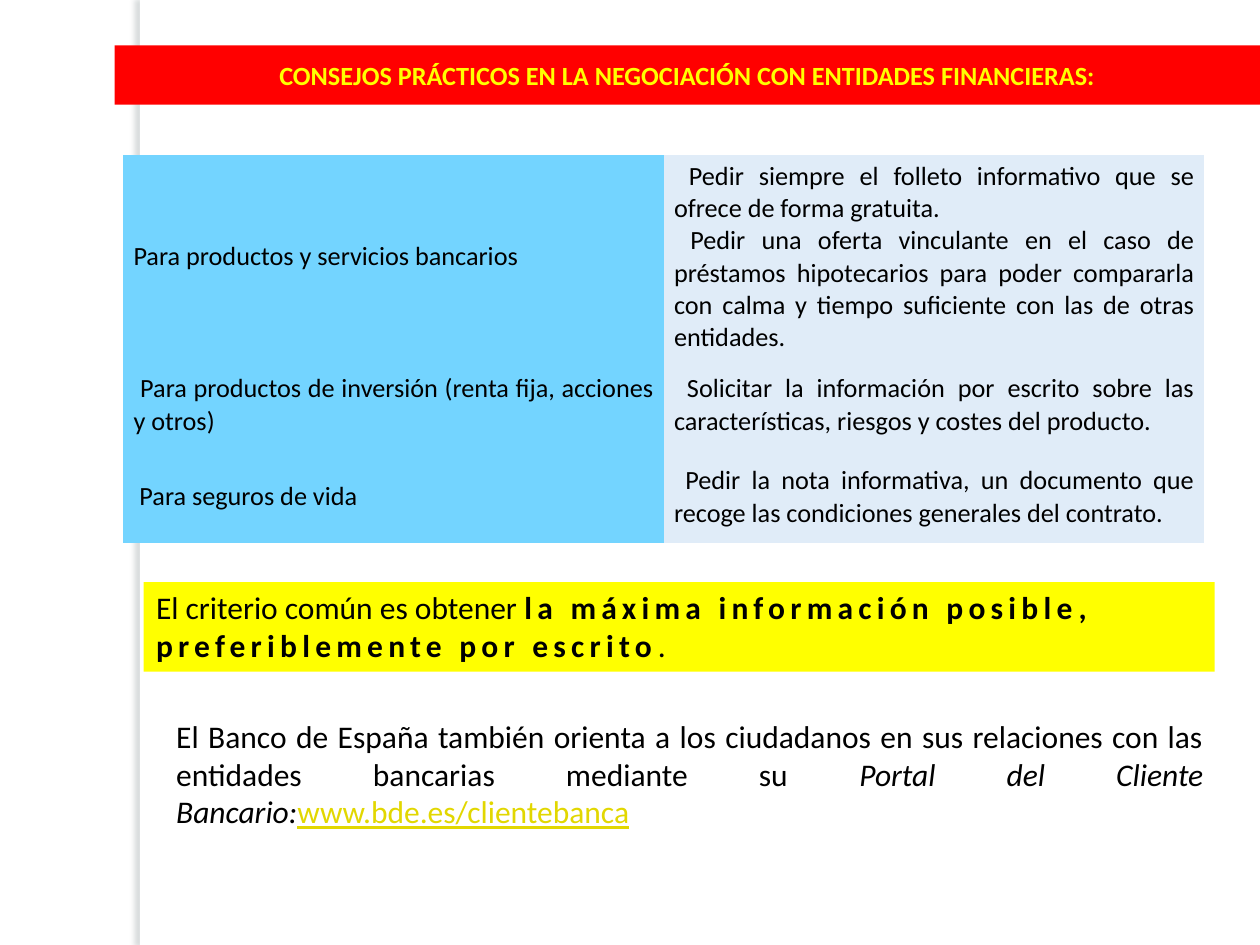
"""Build a slide of practical advice for negotiating with financial entities."""
from lxml import etree
from pptx import Presentation
from pptx import util as u
from pptx.dml import color
from pptx.enum import shapes, text
from pptx.oxml import ns

COLORS = {
    "white": "FFFFFF", "black": "000000", "red": "FF0000", "yellow": "FFFF00",
    "sky": "73D4FF", "pale": "E0ECF8", "link": "E2D700", "shade": "6C7A7C",
}
JUSTIFY = text.PP_ALIGN.JUSTIFY
NO_STYLE = "{2D5ABB26-0587-4C30-8999-92F81FD0307C}"
ROWS = [
    (1.62, ["Para productos y servicios bancarios"],
     [" Pedir siempre el folleto informativo que se ofrece de forma gratuita.",
      " Pedir una oferta vinculante en el caso de préstamos hipotecarios para poder "
      "compararla con calma y tiempo suficiente con las de otras entidades."]),
    (0.73, [" Para productos de inversión (renta fija, acciones y otros)"],
     [" Solicitar la información por escrito sobre las características, riesgos y "
      "costes del producto."]),
    (0.73, [" Para seguros de vida"],
     [" Pedir la nota informativa, un documento que recoge las condiciones generales "
      "del contrato."]),
]
SPACED = {"bold": True, "spacing": 3}
CRITERION = [
    ("El criterio común es obtener ", {}),
    ("la máxima información posible", SPACED),
    (", ", {"bold": True}),
    ("preferiblemente por escrito", SPACED),
    (".", {}),
]
PORTAL = [
    ("El Banco de España también orienta a los ciudadanos en sus relaciones con las "
     "entidades bancarias mediante su ", {}),
    ("Portal del Cliente Bancario:", {"italic": True}),
    ("www.bde.es/clientebanca", {"color": "link", "underline": True}),
]


def rgb(name):
    return color.RGBColor.from_string(COLORS[name])


def paint(item, name):
    item.fill.solid()
    item.fill.fore_color.rgb = rgb(name)


def write(para, spans, size, align=None):
    """Fill a paragraph with formatted spans."""
    para.alignment = align
    for words, style in spans:
        span = para.add_run()
        span.text = words
        values = {"name": "Calibri", "size": u.Pt(size), "color": "black", **style}
        span.font.color.rgb = rgb(values.pop("color"))
        spacing = values.pop("spacing", 0)
        if spacing:
            span.font._element.set("spc", str(spacing * 100))
        for key, value in values.items():
            setattr(span.font, key, value)


def add_strip(page):
    """Draw the white vertical strip with its soft shadow to the left."""
    strip = page.shapes.add_shape(
        shapes.MSO_SHAPE.RECTANGLE, u.Inches(1.11), 0, u.Inches(0.08), u.Inches(7.5))
    paint(strip, "white")
    strip.line.fill.background()
    effects = etree.SubElement(strip._element.spPr, ns.qn("a:effectLst"))
    shadow = etree.SubElement(
        effects, ns.qn("a:outerShdw"), blurRad=str(u.Pt(3)), dist=str(u.Pt(3)),
        dir=str(180 * 60000), rotWithShape="0")
    tint = etree.SubElement(shadow, ns.qn("a:srgbClr"), val=COLORS["shade"])
    etree.SubElement(tint, ns.qn("a:alpha"), val="25000")


def add_advice(page):
    """Lay out the advice table, one product family a row."""
    frame = page.shapes.add_table(
        len(ROWS), 2, *map(u.Inches, (0.98, 1.23, 8.58, 3.08)))
    table = frame.table
    table.first_row = table.horz_banding = False
    table._tbl.tblPr.find(ns.qn("a:tableStyleId")).text = NO_STYLE
    margins = {"margin_left": 0.08, "margin_right": 0.08,
               "margin_top": 0.04, "margin_bottom": 0.04}
    for row, (height, *columns) in enumerate(ROWS):
        table.rows[row].height = u.Inches(height)
        for column, lines in enumerate(columns):
            cell = table.cell(row, column)
            paint(cell, ("sky", "pale")[column])
            cell.vertical_anchor = text.MSO_ANCHOR.MIDDLE
            for side, margin in margins.items():
                setattr(cell, side, u.Inches(margin))
            for index, line in enumerate(lines):
                body = cell.text_frame
                para = body.add_paragraph() if index else body.paragraphs[0]
                write(para, [(line, {})], 15, JUSTIFY)


def add_title(page):
    """Turn the title placeholder into the red band above the strip."""
    title = page.shapes.title
    title.element.getparent().append(title.element)
    places = {"left": 0.91, "top": 0.36, "width": 9.09, "height": 0.47}
    for key, value in places.items():
        setattr(title, key, u.Inches(value))
    paint(title, "red")
    title.text_frame.auto_size = text.MSO_AUTO_SIZE.NONE
    title.text_frame.vertical_anchor = text.MSO_ANCHOR.MIDDLE
    words = "CONSEJOS PRÁCTICOS EN LA NEGOCIACIÓN CON ENTIDADES FINANCIERAS:"
    write(title.text_frame.paragraphs[0],
          [(words, {"color": "yellow", "bold": True})], 15, text.PP_ALIGN.CENTER)


def add_note(page, place, spans, align=None, fill=None):
    """Add a wrapped text box, filled if a colour is named."""
    box = page.shapes.add_textbox(*map(u.Inches, place))
    if fill:
        paint(box, fill)
    box.text_frame.word_wrap = True
    box.text_frame.auto_size = text.MSO_AUTO_SIZE.SHAPE_TO_FIT_TEXT
    write(box.text_frame.paragraphs[0], spans, 18, align)


def main():
    deck = Presentation()
    deck.slide_width, deck.slide_height = u.Inches(10), u.Inches(7.5)
    page = deck.slides.add_slide(deck.slide_layouts[5])
    add_strip(page)
    add_advice(page)
    add_title(page)
    add_note(page, (1.14, 4.62, 8.5, 0.71), CRITERION, fill="yellow")
    add_note(page, (1.3, 5.64, 8.35, 1.01), PORTAL, JUSTIFY)
    deck.save("out.pptx")


if __name__ == "__main__":
    main()
